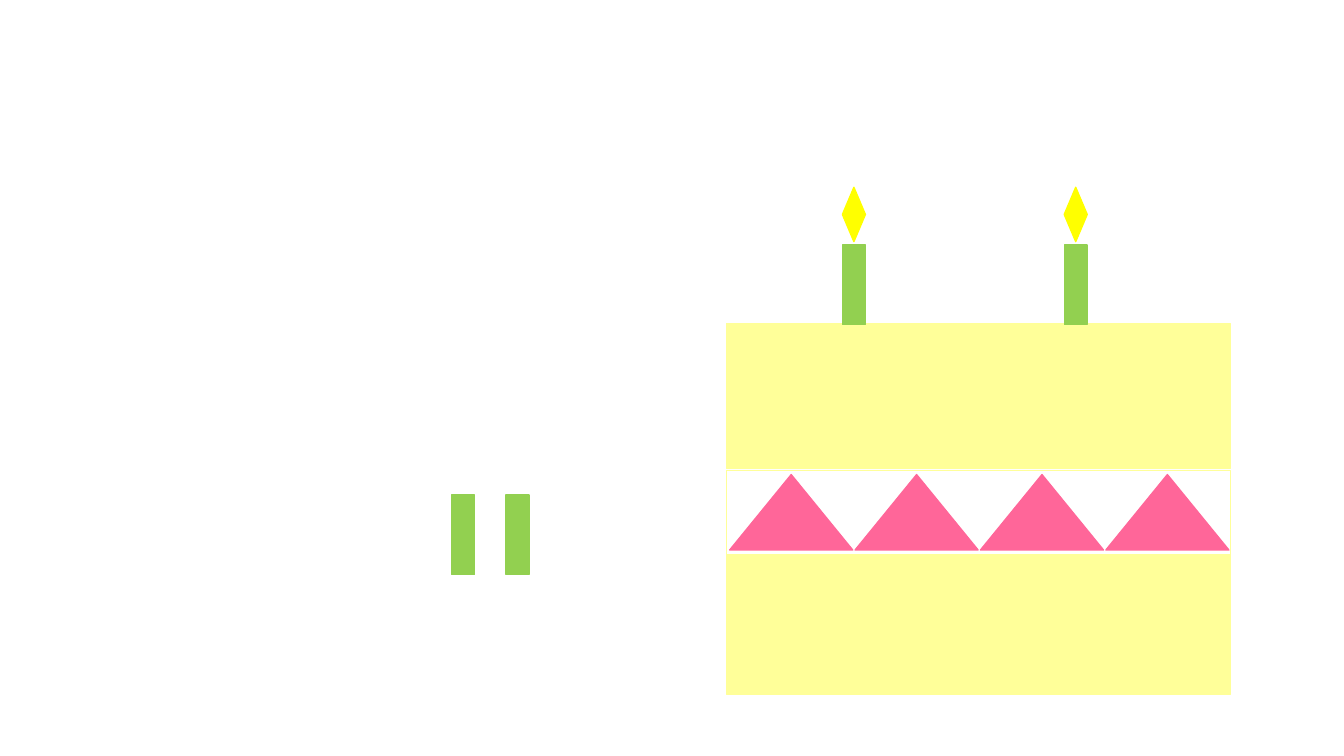
"""Draw a two-layer birthday cake with candles on a blank slide."""
from dataclasses import dataclass

from pptx import Presentation
from pptx.dml.color import RGBColor
from pptx.enum import shapes
from pptx.slide import Slide
from pptx.util import Cm, Pt

MSO = shapes.MSO_SHAPE


@dataclass(frozen=True)
class Theme:
    sponge: str = "FFFF99"
    cream: str = "FFFFFF"
    icing: str = "FF6699"
    candle: str = "92D050"
    flame: str = "FFFF00"
    line_width: float = 1


@dataclass(frozen=True)
class Part:
    kind: MSO
    left: float
    top: float
    width: float
    height: float
    fill: str
    line: str


THEME = Theme()
CAKE_LEFT, CAKE_WIDTH = 18.31, 12.7
ICING_LEFT, ICING_PITCH, ICING_COUNT = 18.39, 3.16, 4
LIT_CANDLES = (21.23, 26.82)
SPARE_CANDLES = (11.38, 12.75)


def layer(top: float, height: float, fill: str) -> Part:
    return Part(MSO.RECTANGLE, CAKE_LEFT, top, CAKE_WIDTH, height, fill, THEME.sponge)


def icing(index: int) -> Part:
    left = ICING_LEFT + index * ICING_PITCH
    return Part(MSO.ISOSCELES_TRIANGLE, left, 11.96, 3.1, 1.9, THEME.icing, THEME.icing)


def candle(left: float, top: float) -> Part:
    return Part(MSO.RECTANGLE, left, top, 0.58, 2.01, THEME.candle, THEME.candle)


def flame(left: float) -> Part:
    return Part(MSO.DIAMOND, left, 4.72, 0.58, 1.37, THEME.flame, THEME.flame)


def draw(s: Slide, part: Part) -> None:
    sp = s.shapes.add_shape(
        part.kind, Cm(part.left), Cm(part.top), Cm(part.width), Cm(part.height)
    )
    sp.shadow.inherit = False
    sp.fill.solid()
    sp.fill.fore_color.rgb = RGBColor.from_string(part.fill)
    sp.line.color.rgb = RGBColor.from_string(part.line)
    sp.line.width = Pt(THEME.line_width)


def main() -> None:
    prs = Presentation()
    prs.slide_width, prs.slide_height = Cm(33.87), Cm(19.05)
    s = prs.slides.add_slide(prs.slide_layouts[6])
    parts = [
        layer(8.15, 3.66, THEME.sponge),
        layer(13.84, 3.66, THEME.sponge),
        layer(11.86, 2.11, THEME.cream),
        *(icing(i) for i in reversed(range(ICING_COUNT))),
        *(candle(left, 6.17) for left in LIT_CANDLES),
        *(flame(left) for left in LIT_CANDLES),
        *(candle(left, 12.47) for left in reversed(SPARE_CANDLES)),
    ]
    for part in parts:
        draw(s, part)
    prs.save("out.pptx")


if __name__ == "__main__":
    main()
